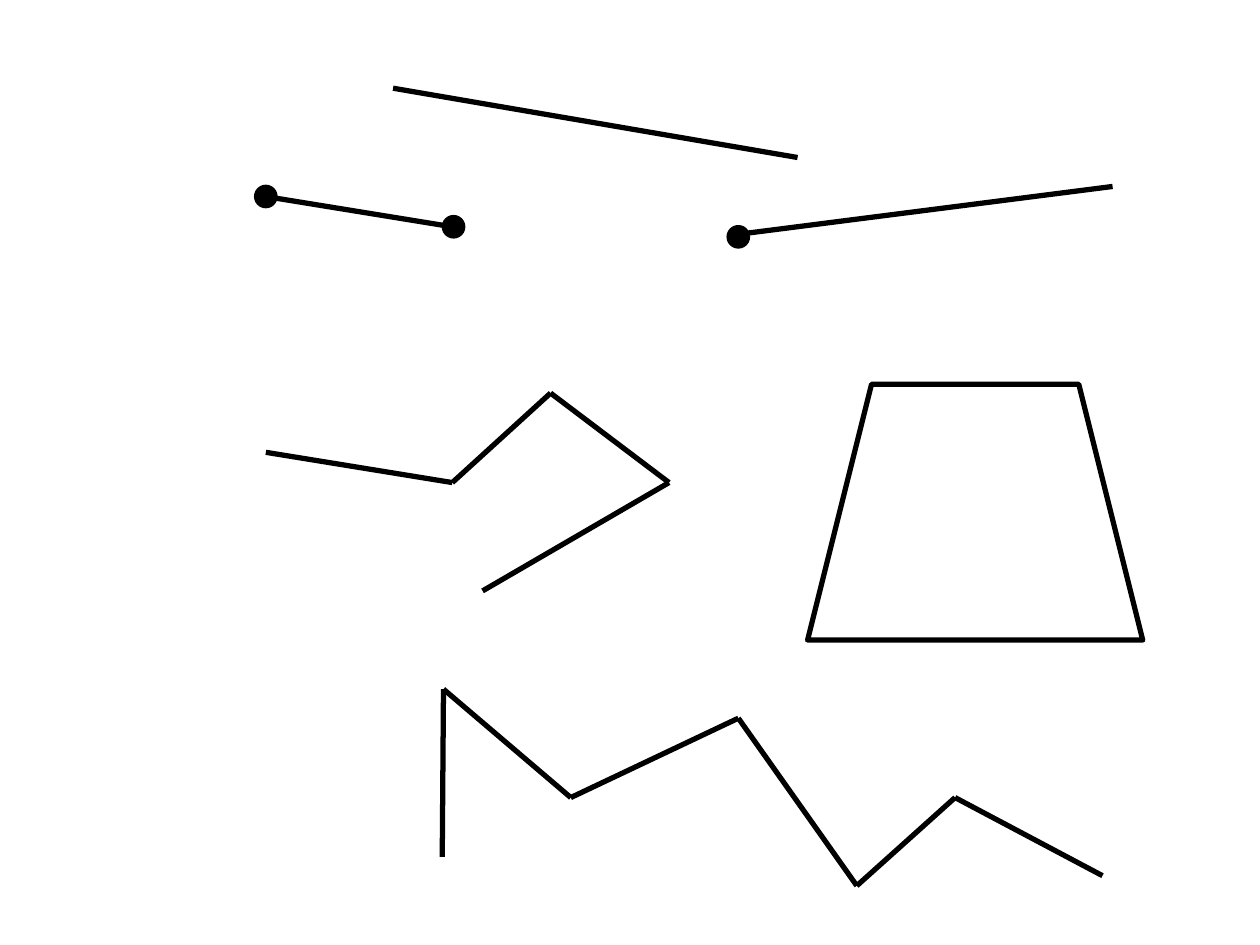
from itertools import pairwise

from lxml import etree
from pptx import Presentation
from pptx.dml.color import RGBColor
from pptx.enum.shapes import MSO_CONNECTOR, MSO_SHAPE
from pptx.oxml.ns import qn
from pptx.util import Inches, Pt

STRAIGHT = MSO_CONNECTOR.STRAIGHT
OVAL, TRAPEZOID = MSO_SHAPE.OVAL, MSO_SHAPE.TRAPEZOID

THEME = {
    "ink": RGBColor(0, 0, 0),
    "paper": RGBColor(255, 255, 255),
    "line": Pt(3),
    "dot_line": Pt(2),
}

# Content, in inches: each path is a chain of points
LINE = [(3.12, 0.7), (6.33, 1.25)]
RAY = [(5.78, 1.87), (8.83, 1.48)]
SEGMENT = [(2.11, 1.56), (3.59, 1.8)]
SHORT_POLYLINE = [(2.11, 3.59), (3.59, 3.83), (4.37, 3.12), (5.31, 3.83), (3.83, 4.69)]
LONG_POLYLINE = [(3.51, 6.8), (3.52, 5.47), (4.53, 6.33), (5.86, 5.7),
                 (6.8, 7.03), (7.58, 6.33), (8.75, 6.95)]
PATHS = [LINE, RAY, SEGMENT, SHORT_POLYLINE, LONG_POLYLINE]
DOTS = [(5.78, 1.8), (3.52, 1.72), (2.03, 1.48)]
DOT_SIZE = 0.16
POLYGON = (6.41, 3.05, 2.66, 2.03)


def style_line(line, width):
    line.color.rgb = THEME["ink"]
    line.width = width


def add_path(slide, points):
    for start, end in pairwise(points):
        edge = slide.shapes.add_connector(STRAIGHT, *map(Inches, start + end))
        style_line(edge.line, THEME["line"])
        etree.SubElement(edge._element.spPr, qn("a:effectLst"))


def add_outline(slide, kind, place, width):
    shape = slide.shapes.add_shape(kind, *map(Inches, place))
    shape.shadow.inherit = False
    style_line(shape.line, width)
    return shape


deck = Presentation()
deck.slide_width, deck.slide_height = Inches(10), Inches(7.5)
slide = deck.slides.add_slide(deck.slide_layouts[6])
slide.background.fill.solid()
slide.background.fill.fore_color.rgb = THEME["paper"]

# Straight line, ray, segment and polylines
for points in PATHS:
    add_path(slide, points)

# End points of the ray and the segment
for left, top in DOTS:
    dot = add_outline(slide, OVAL, (left, top, DOT_SIZE, DOT_SIZE), THEME["dot_line"])
    dot.fill.solid()
    dot.fill.fore_color.rgb = THEME["ink"]

# Closed polygon
polygon = add_outline(slide, TRAPEZOID, POLYGON, THEME["line"])
polygon.fill.background()

deck.save("out.pptx")
